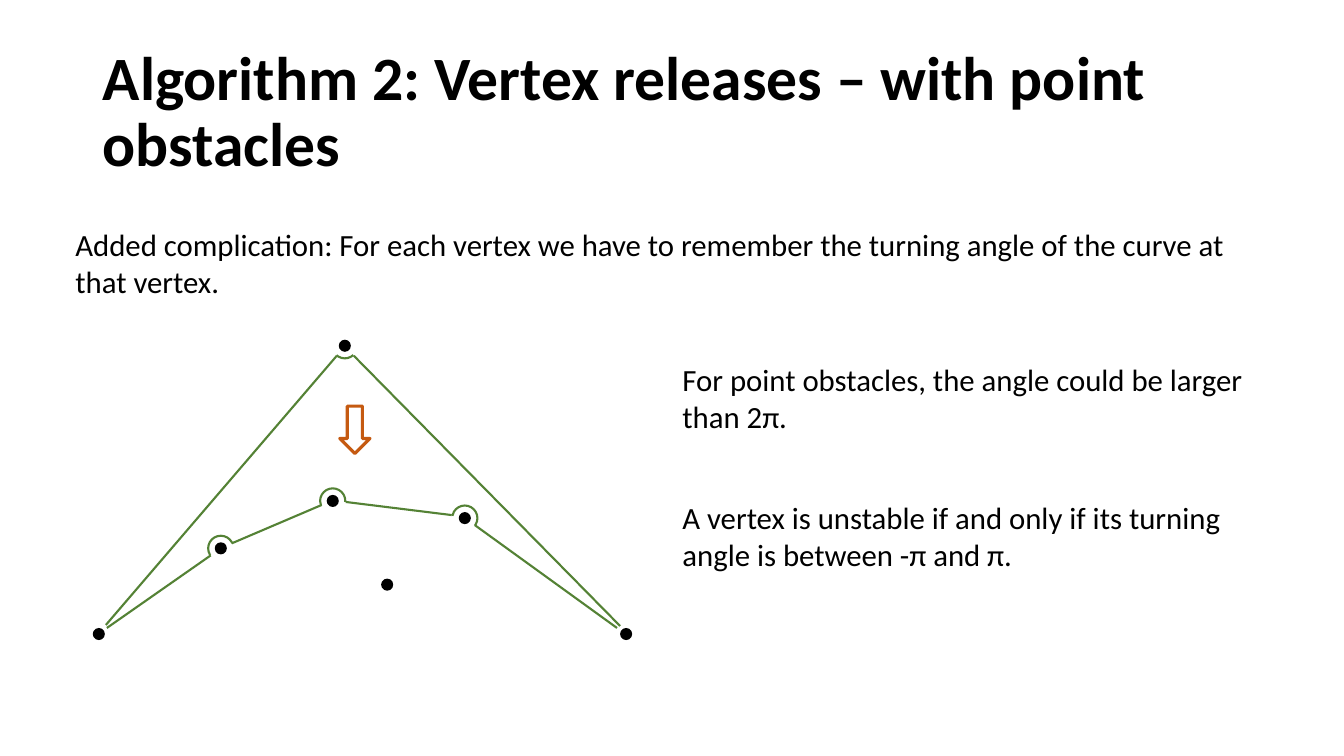
from lxml import etree
from pptx import Presentation
from pptx.dml.color import RGBColor
from pptx.enum.shapes import MSO_CONNECTOR, MSO_SHAPE
from pptx.enum.text import MSO_ANCHOR, MSO_AUTO_SIZE, PP_ALIGN
from pptx.oxml.ns import qn
from pptx.util import Inches, Pt

COLORS = {"ink": "000000", "curve": "548235", "release": "C55A11"}
FONT = "Calibri"
DOT_SIZE = 0.12
TURN_SIZE = 0.25

# Centres of the points; a turn gives the start and end degrees of its arc.
POINTS = [
    ((0.98, 6.29), None),
    ((6.21, 6.29), None),
    ((3.84, 5.8), None),
    ((3.42, 3.43), (47.45, 130.97)),
    ((2.19, 5.44), (147.88, 336.27)),
    ((3.3, 4.97), (158.2, 4.87)),
    ((4.61, 5.14), (190.43, 36.98)),
]
CURVE_SEGMENTS = [
    ((3.51, 3.53), (6.15, 6.21)),
    ((3.34, 3.53), (1.05, 6.2)),
    ((2.09, 5.51), (1.06, 6.23)),
    ((3.19, 5.01), (2.3, 5.39)),
    ((4.48, 5.11), (3.43, 4.98)),
    ((6.12, 6.23), (4.71, 5.21)),
]
REMARKS = [
    ((0.65, 2.19, 11.77, 0.84),
     "Added complication: For each vertex we have to remember "
     "the turning angle of the curve at that vertex."),
    ((6.67, 3.53, 5.89, 0.84),
     "For point obstacles, the angle could be larger than 2π."),
    ((6.67, 4.9, 5.89, 0.84),
     "A vertex is unstable if and only if its turning angle "
     "is between -π and π."),
]


def color(name):
    return RGBColor.from_string(COLORS[name])


def write(paragraph, text, size, bold=False):
    run = paragraph.add_run()
    run.text = text
    run.font.name = FONT
    run.font.size = Pt(size)
    run.font.bold = bold
    run.font.color.rgb = color("ink")


def set_title(slide, text):
    title = slide.shapes.title
    title.left, title.top = Inches(0.92), Inches(0.4)
    title.width, title.height = Inches(11.5), Inches(1.45)
    frame = title.text_frame
    frame.auto_size = MSO_AUTO_SIZE.NONE
    frame.vertical_anchor = MSO_ANCHOR.MIDDLE
    paragraph = frame.paragraphs[0]
    paragraph.alignment = PP_ALIGN.LEFT
    paragraph.line_spacing = 0.9
    write(paragraph, text, 44, bold=True)


def add_remark(slide, box, text):
    frame = slide.shapes.add_textbox(*map(Inches, box)).text_frame
    frame.word_wrap = True
    frame.auto_size = MSO_AUTO_SIZE.SHAPE_TO_FIT_TEXT
    write(frame.paragraphs[0], text, 22)


def add_outline(slide, preset, box, line_color, width):
    outline = slide.shapes.add_shape(preset, *map(Inches, box))
    outline.shadow.inherit = False
    outline.fill.background()
    outline.line.color.rgb = color(line_color)
    outline.line.width = Pt(width)
    return outline


def box_around(center, size):
    x, y = center
    return x - size / 2, y - size / 2, size, size


def add_dot(slide, center):
    box = box_around(center, DOT_SIZE)
    dot = slide.shapes.add_shape(MSO_SHAPE.OVAL, *map(Inches, box))
    dot.shadow.inherit = False
    dot.fill.solid()
    dot.fill.fore_color.rgb = color("ink")
    dot.line.fill.background()


def add_turn(slide, center, degrees):
    """Draw the arc with which the curve bends around a point."""
    box = box_around(center, TURN_SIZE)
    turn = add_outline(slide, MSO_SHAPE.ARC, box, "curve", 1.5)
    for index, angle in enumerate(degrees):
        turn.adjustments[index] = angle * 0.6  # 60000 units a degree, over 100000


def add_segment(slide, start, end):
    segment = slide.shapes.add_connector(
        MSO_CONNECTOR.STRAIGHT, *map(Inches, start + end))
    segment.line.color.rgb = color("curve")
    segment.line.width = Pt(1.5)
    etree.SubElement(segment._element.spPr, qn("a:effectLst"))


def main():
    prs = Presentation()
    prs.slide_width, prs.slide_height = Inches(13.33), Inches(7.5)
    slide = prs.slides.add_slide(prs.slide_layouts[5])

    set_title(slide, "Algorithm 2: Vertex releases – with point obstacles")
    for start, end in CURVE_SEGMENTS:
        add_segment(slide, start, end)
    for center, turn in POINTS:
        add_dot(slide, center)
        if turn:
            add_turn(slide, center, turn)
    add_outline(slide, MSO_SHAPE.DOWN_ARROW, (3.37, 4.03, 0.3, 0.47), "release", 2.25)
    for box, text in REMARKS:
        add_remark(slide, box, text)

    prs.save("out.pptx")


if __name__ == "__main__":
    main()
